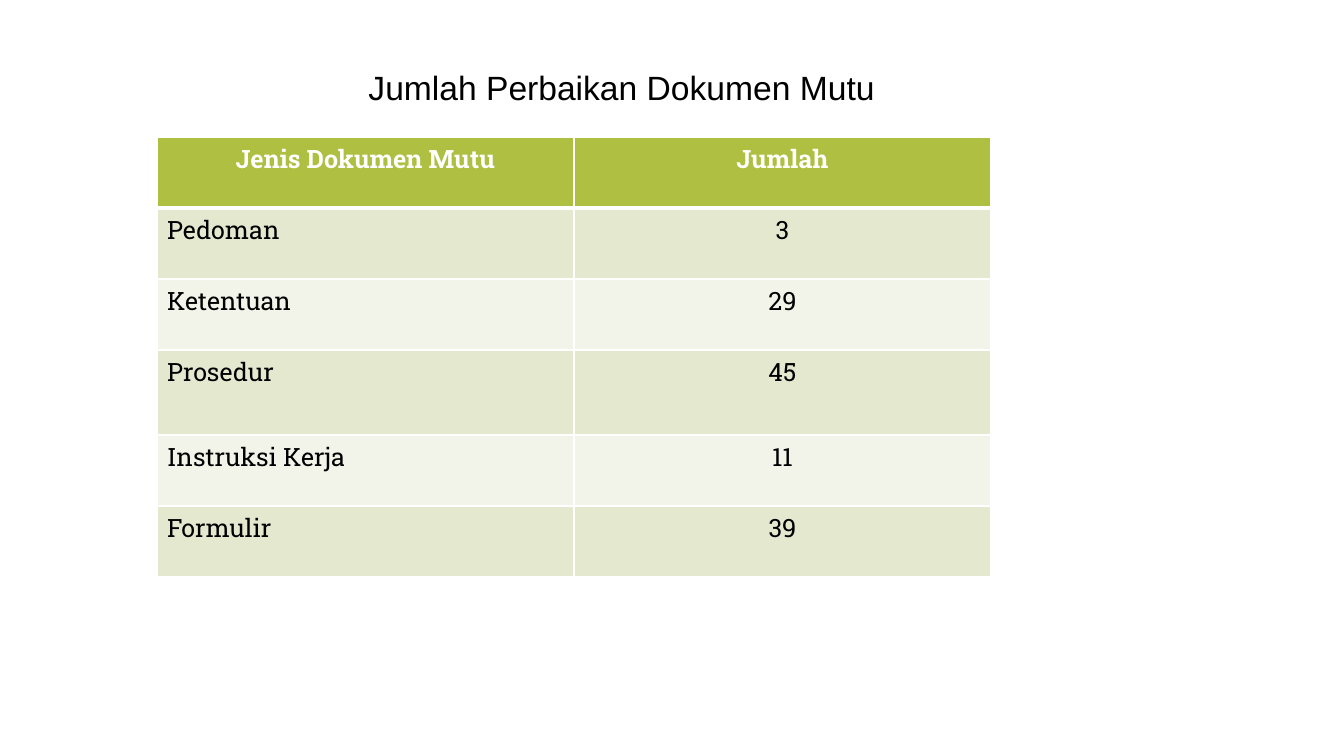
import pptx
import pptx.util
import pptx.dml.color
import pptx.enum.text
import pptx.oxml.ns
from lxml import etree

TITLE = "Jumlah Perbaikan Dokumen Mutu"
ROWS = [
    ("Jenis Dokumen Mutu", "Jumlah"),
    ("Pedoman", "3"),
    ("Ketentuan", "29"),
    ("Prosedur", "45"),
    ("Instruksi Kerja", "11"),
    ("Formulir", "39"),
]
ROW_HEIGHTS = [71, 71, 71, 85, 71, 71]
COLUMN_WIDTH = 417
TABLE_LEFT, TABLE_TOP = 157, 137
TITLE_BOX = (184, 42, 875, 65)
HEADER_FILL = "AFBF41"
BAND_FILLS = ("E3E8CF", "F2F4E9")
WHITE, BLACK = "FFFFFF", "000000"
ALIGN = pptx.enum.text.PP_ALIGN


def px(length):
    return pptx.util.Emu(round(length * 914400 / 100.8))


def color(value):
    return pptx.dml.color.RGBColor.from_string(value)


def write(para, text, font, size, shade, align, bold=False):
    para.alignment = align
    span = para.add_run()
    span.text = text
    span.font.name = font
    span.font.size = pptx.util.Pt(size)
    span.font.bold = bold
    span.font.color.rgb = color(shade)


def add_borders(cell, top, bottom):
    properties = cell._tc.get_or_add_tcPr()
    qn = pptx.oxml.ns.qn
    for side, width in (("L", 1), ("R", 1), ("T", top), ("B", bottom)):
        line = etree.SubElement(properties, qn(f"a:ln{side}"), w=str(pptx.util.Pt(width)))
        fill = etree.SubElement(line, qn("a:solidFill"))
        etree.SubElement(fill, qn("a:srgbClr"), val=WHITE)


def add_title(page):
    box = page.shapes.title
    box.left, box.top, box.width, box.height = map(px, TITLE_BOX)
    frame = box.text_frame
    frame.word_wrap = True
    frame.auto_size = pptx.enum.text.MSO_AUTO_SIZE.SHAPE_TO_FIT_TEXT
    frame.vertical_anchor = pptx.enum.text.MSO_ANCHOR.TOP
    para = frame.paragraphs[0]
    para.line_spacing = 1.5
    write(para, TITLE, "Arial", 24, BLACK, ALIGN.CENTER)


def add_document_table(page):
    columns = len(ROWS[0])
    table = page.shapes.add_table(
        len(ROWS), columns, px(TABLE_LEFT), px(TABLE_TOP),
        px(COLUMN_WIDTH * columns), px(sum(ROW_HEIGHTS))).table
    for column in table.columns:
        column.width = px(COLUMN_WIDTH)
    for r, values in enumerate(ROWS):
        table.rows[r].height = px(ROW_HEIGHTS[r])
        header = r == 0
        for c, text in enumerate(values):
            cell = table.cell(r, c)
            add_borders(cell, 3 if r == 1 else 1, 3 if header else 1)
            cell.fill.solid()
            cell.fill.fore_color.rgb = color(HEADER_FILL if header else BAND_FILLS[(r - 1) % 2])
            align = ALIGN.CENTER if header or c == 1 else ALIGN.LEFT
            write(cell.text_frame.paragraphs[0], text, "Roboto Slab", 18,
                  WHITE if header else BLACK, align, header)


def main():
    deck = pptx.Presentation()
    deck.slide_width, deck.slide_height = px(1344), px(756)
    page = deck.slides.add_slide(deck.slide_layouts[5])
    add_document_table(page)
    add_title(page)
    deck.save("out.pptx")


if __name__ == "__main__":
    main()
